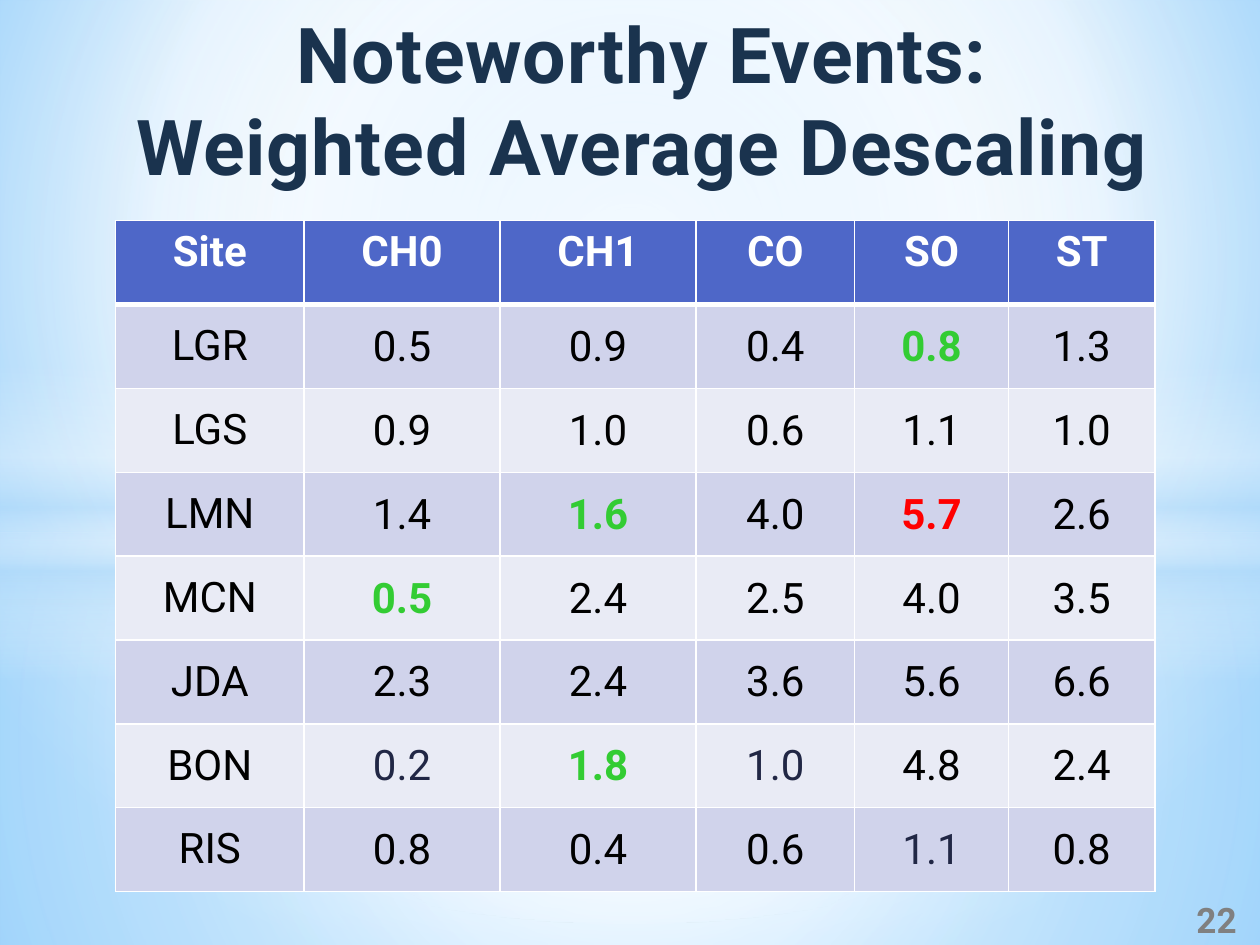
import pptx
import pptx.util
import pptx.dml.color
import pptx.enum.shapes
import pptx.enum.text
import pptx.oxml
import pptx.oxml.ns

Cm, Pt = pptx.util.Cm, pptx.util.Pt
qn = pptx.oxml.ns.qn
KIND = pptx.enum.shapes.MSO_SHAPE
MIDDLE = pptx.enum.text.MSO_ANCHOR.MIDDLE
CENTER = pptx.enum.text.PP_ALIGN.CENTER
NS = pptx.oxml.ns.nsdecls("a")
WIDE, HIGH = 25.4, 19.05
FACE = "Roboto"
WHITE, BLACK, NAVY = "FFFFFF", "000000", "212745"
GREEN, RED, GRAY = "33CC33", "FF0000", "808080"
HEADER, ODD, EVEN = "4E67C8", "D0D3EB", "E9EBF5"
HAZE = "B4DCFA"

HEADS = ["Site", "CH0", "CH1", "CO", "SO", "ST"]
COLS = [3.8, 3.95, 3.95, 3.2, 3.1, 2.95]
ROWS = [
    ["LGR", "0.5", "0.9", "0.4", "0.8", "1.3"],
    ["LGS", "0.9", "1.0", "0.6", "1.1", "1.0"],
    ["LMN", "1.4", "1.6", "4.0", "5.7", "2.6"],
    ["MCN", "0.5", "2.4", "2.5", "4.0", "3.5"],
    ["JDA", "2.3", "2.4", "3.6", "5.6", "6.6"],
    ["BON", "0.2", "1.8", "1.0", "4.8", "2.4"],
    ["RIS", "0.8", "0.4", "0.6", "1.1", "0.8"],
]
# Marked values, by site and column
MARKS = {
    ("LGR", "SO"): GREEN, ("LMN", "CH1"): GREEN, ("LMN", "SO"): RED,
    ("MCN", "CH0"): GREEN, ("BON", "CH1"): GREEN,
    ("BON", "CH0"): NAVY, ("BON", "CO"): NAVY, ("RIS", "SO"): NAVY,
}


def color(code):
    return pptx.dml.color.RGBColor.from_string(code)


def paint(fill, code):
    fill.solid()
    fill.fore_color.rgb = color(code)


def style(para, size, code, bold):
    para.alignment = CENTER
    font = para.font
    font.name, font.size, font.bold = FACE, Pt(size), bold
    paint(font.fill, code)


def blend(props, stops, focus=None):
    """Swap a solid fill for a gradient: round about focus, else downward.

    Each stop is position, color and opacity; both numbers are percents.
    """
    marks = "".join(
        f'<a:gs pos="{pos * 1000}"><a:srgbClr val="{code}">'
        f'<a:alpha val="{alpha * 1000}"/></a:srgbClr></a:gs>'
        for pos, code, alpha in stops)
    way = '<a:lin ang="5400000" scaled="0"/>'
    if focus:
        sides = " ".join(f'{side}="{part * 1000}"' for side, part in zip("ltrb", focus))
        way = f'<a:path path="circle"><a:fillToRect {sides}/></a:path>'
    fill = pptx.oxml.parse_xml(
        f'<a:gradFill {NS} rotWithShape="1"><a:gsLst>{marks}</a:gsLst>{way}</a:gradFill>')
    props.replace(props.find(qn("a:solidFill")), fill)


def scene(slide, left, top, wide, high):
    # Base gradient
    slide.background.fill.solid()
    blend(slide.element.find(".//" + qn("p:bgPr")),
          [(0, "9ED5FF", 100), (60, WHITE, 100), (100, "5BB9FF", 100)],
          (20, 10, 20, 60))
    # Ground, sky, band on the skyline, central light
    sky, mid = 10.74, (50, 50, 50, 50)
    layers = [
        (KIND.RECTANGLE, sky, high - sky, mid,
         [(0, WHITE, 91), (37, WHITE, 76), (100, HAZE, 79)]),
        (KIND.RECTANGLE, 0, sky, mid,
         [(0, WHITE, 89), (48, WHITE, 62), (100, HAZE, 79)]),
        (KIND.RECTANGLE, 7.37, 6.35, None,
         [(0, WHITE, 0), (29, WHITE, 30), (45, HAZE, 40),
          (55, WHITE, 26), (65, HAZE, 60), (100, WHITE, 0)]),
        (KIND.OVAL, 4.45, 14.17, mid, [(0, WHITE, 100), (54, WHITE, 0)]),
    ]
    for kind, down, tall, focus, stops in layers:
        shape = slide.shapes.add_shape(
            kind, Cm(left), Cm(top + down), Cm(wide), Cm(tall))
        shape.shadow.inherit = False
        shape.line.fill.background()
        shape.fill.solid()
        blend(shape.element.spPr, stops, focus)


def label(slide, box, text, size, code):
    """Add a bold, centred text box."""
    shape = slide.shapes.add_textbox(*map(Cm, box))
    frame = shape.text_frame
    frame.word_wrap = True
    frame.text = text
    for para in frame.paragraphs:
        style(para, size, code, True)
    return shape


def title(slide, *box):
    shape = label(slide, box, "Noteworthy Events:\nWeighted Average Descaling",
                  44, "1A334E")
    # Left indent, letter spacing and gradient ink
    for props in shape.element.iter(qn("a:pPr")):
        props.set("marL", str(Cm(0.5)))
        props.set("indent", "0")
        ink = props.find(qn("a:defRPr"))
        ink.set("spc", "50")
        blend(ink, [(25, "191D34", 100), (38, "1A334E", 100), (100, "20A0CE", 100)])


def border(cell, sizes):
    """Draw white cell borders; sizes are points by side, in schema order."""
    for place, (side, size) in enumerate(sizes.items()):
        cell.insert(place, pptx.oxml.parse_xml(
            f'<a:ln{side} {NS} w="{Pt(size)}"><a:solidFill>'
            f'<a:srgbClr val="{WHITE}"/></a:solidFill></a:ln{side}>'))


def grid(slide, left, top, wide, high):
    rows = [HEADS] + ROWS
    shape = slide.shapes.add_table(
        len(rows), len(HEADS), *map(Cm, (left, top, wide, high)))
    table = shape.table
    for col, size in zip(table.columns, COLS):
        col.width = Cm(size)
    for i, row in enumerate(rows):
        table.rows[i].height = Cm(high / len(rows))
        for j, text in enumerate(row):
            cell = table.cell(i, j)
            cell.text = text
            para = cell.text_frame.paragraphs[0]
            # Header row
            if i == 0:
                paint(cell.fill, HEADER)
                style(para, 24, WHITE, True)
                continue
            # Banded body rows
            paint(cell.fill, ODD if i % 2 else EVEN)
            code = MARKS.get((row[0], HEADS[j]), BLACK)
            style(para, 24, code, code in (GREEN, RED))
            cell.vertical_anchor = MIDDLE
            if j > 0:
                cell.margin_left = cell.margin_right = cell.margin_top = Cm(0.03)
                cell.margin_bottom = 0
    # Borders, heavier under the header
    for i, line in enumerate(shape.element.iter(qn("a:tr"))):
        sizes = {"L": 1, "R": 1, "T": 3 if i == 1 else 1, "B": 3 if i == 0 else 1}
        for cell in line.iter(qn("a:tcPr")):
            border(cell, sizes)


def number(slide, *box):
    shape = label(slide, box, "22", 20, GRAY)
    shape.text_frame.vertical_anchor = MIDDLE


def main():
    deck = pptx.Presentation()
    deck.slide_width, deck.slide_height = Cm(WIDE), Cm(HIGH)
    slide = deck.slides.add_slide(deck.slide_layouts[6])
    scene(slide, 0, 0, WIDE, HIGH)
    title(slide, 0, 0, WIDE, 1.9)
    grid(slide, 2.33, 4.45, sum(COLS), 13.52)
    number(slide, 23.7, 18.03, 1.65, 1.02)
    deck.save("out.pptx")


if __name__ == "__main__":
    main()
